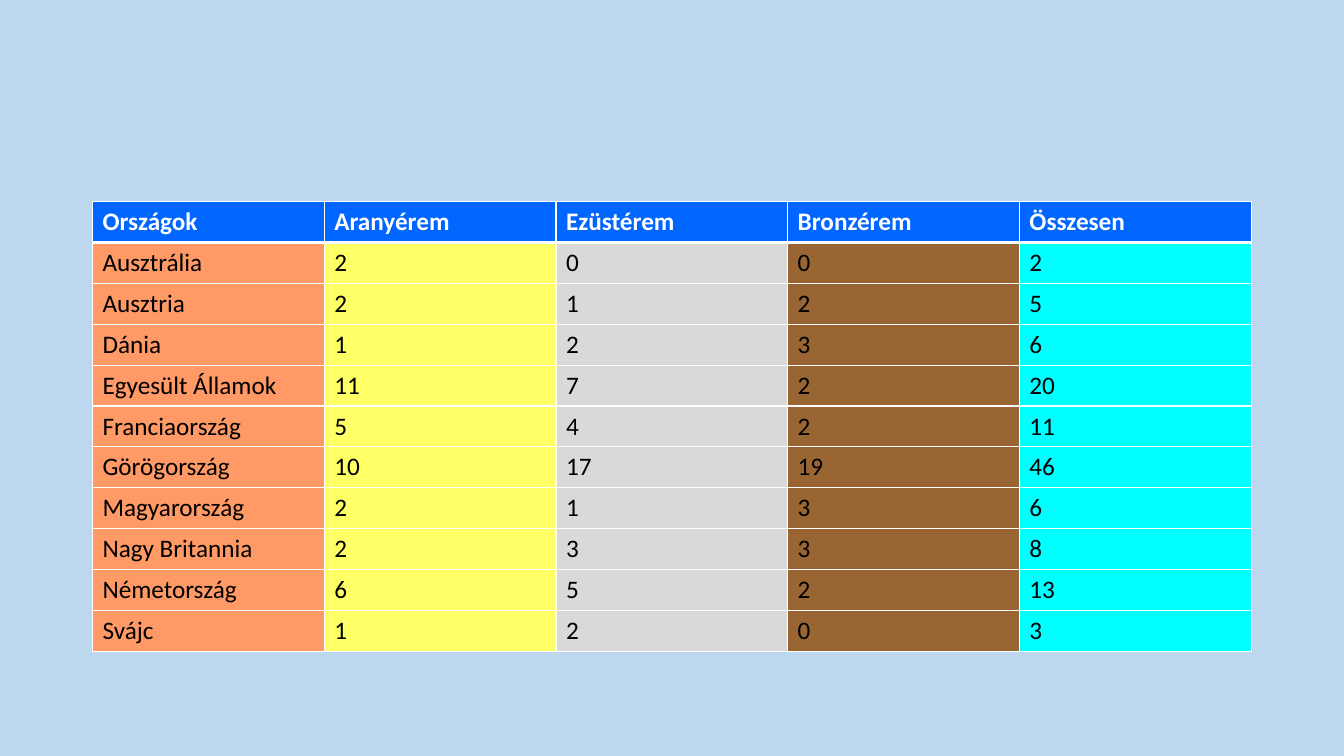
from dataclasses import dataclass

from lxml import etree
from pptx import Presentation
from pptx import util as u
from pptx.dml import color
from pptx.oxml import ns

COLOURS = {
    "background": "BDD7EE",
    "header": "0066FF",
    "country": "FF9966",
    "gold": "FFFF66",
    "silver": "D9D9D9",
    "bronze": "996633",
    "total": "00FFFF",
    "white": "FFFFFF",
    "black": "000000",
}
COLUMN_WIDTH = u.Cm(5.84)
ROW_HEIGHT = u.Cm(1.03)
THIN, THICK = u.Pt(1), u.Pt(3)


@dataclass(frozen=True)
class Column:
    title: str
    colour: str


@dataclass(frozen=True)
class Medals:
    country: str
    gold: int
    silver: int
    bronze: int

    def texts(self) -> list[str]:
        counts = (self.gold, self.silver, self.bronze)
        return [self.country, *map(str, counts), str(sum(counts))]


COLUMNS = [
    Column("Országok", "country"),
    Column("Aranyérem", "gold"),
    Column("Ezüstérem", "silver"),
    Column("Bronzérem", "bronze"),
    Column("Összesen", "total"),
]
MEDALS = [
    Medals("Ausztrália", 2, 0, 0),
    Medals("Ausztria", 2, 1, 2),
    Medals("Dánia", 1, 2, 3),
    Medals("Egyesült Államok", 11, 7, 2),
    Medals("Franciaország", 5, 4, 2),
    Medals("Görögország", 10, 17, 19),
    Medals("Magyarország", 2, 1, 3),
    Medals("Nagy Britannia", 2, 3, 3),
    Medals("Németország", 6, 5, 2),
    Medals("Svájc", 1, 2, 0),
]


def rgb(name: str) -> color.RGBColor:
    return color.RGBColor.from_string(COLOURS[name])


def add_borders(cell, top: int, bottom: int) -> None:
    properties = cell._tc.get_or_add_tcPr()
    widths = {"lnL": THIN, "lnR": THIN, "lnT": top, "lnB": bottom}
    for side, width in widths.items():
        line = etree.SubElement(properties, ns.qn(f"a:{side}"), w=str(int(width)))
        fill = etree.SubElement(line, ns.qn("a:solidFill"))
        etree.SubElement(fill, ns.qn("a:srgbClr"), val=COLOURS["white"])


def fill_cell(cell, words: str, fill: str, row: int) -> None:
    is_header = row == 0
    add_borders(cell, THICK if row == 1 else THIN, THICK if is_header else THIN)
    cell.fill.solid()
    cell.fill.fore_color.rgb = rgb(fill)
    cell.text = words
    font = cell.text_frame.paragraphs[0].font
    font.name = "Calibri"
    font.size = u.Pt(18)
    font.bold = is_header
    font.color.rgb = rgb("white" if is_header else "black")


def add_medal_table(page) -> None:
    rows = [[column.title for column in COLUMNS]]
    rows += [medals.texts() for medals in MEDALS]
    table = page.shapes.add_table(
        len(rows), len(COLUMNS), u.Cm(2.33), u.Cm(5.08),
        COLUMN_WIDTH * len(COLUMNS), ROW_HEIGHT * len(rows),
    ).table
    for table_column in table.columns:
        table_column.width = COLUMN_WIDTH
    for row, texts in enumerate(rows):
        table.rows[row].height = ROW_HEIGHT
        for index, (words, column) in enumerate(zip(texts, COLUMNS)):
            fill = "header" if row == 0 else column.colour
            fill_cell(table.cell(row, index), words, fill, row)


def main() -> None:
    deck = Presentation()
    deck.slide_width, deck.slide_height = u.Cm(33.87), u.Cm(19.05)
    page = deck.slides.add_slide(deck.slide_layouts[6])
    page.background.fill.solid()
    page.background.fill.fore_color.rgb = rgb("background")
    add_medal_table(page)
    deck.save("out.pptx")


if __name__ == "__main__":
    main()
